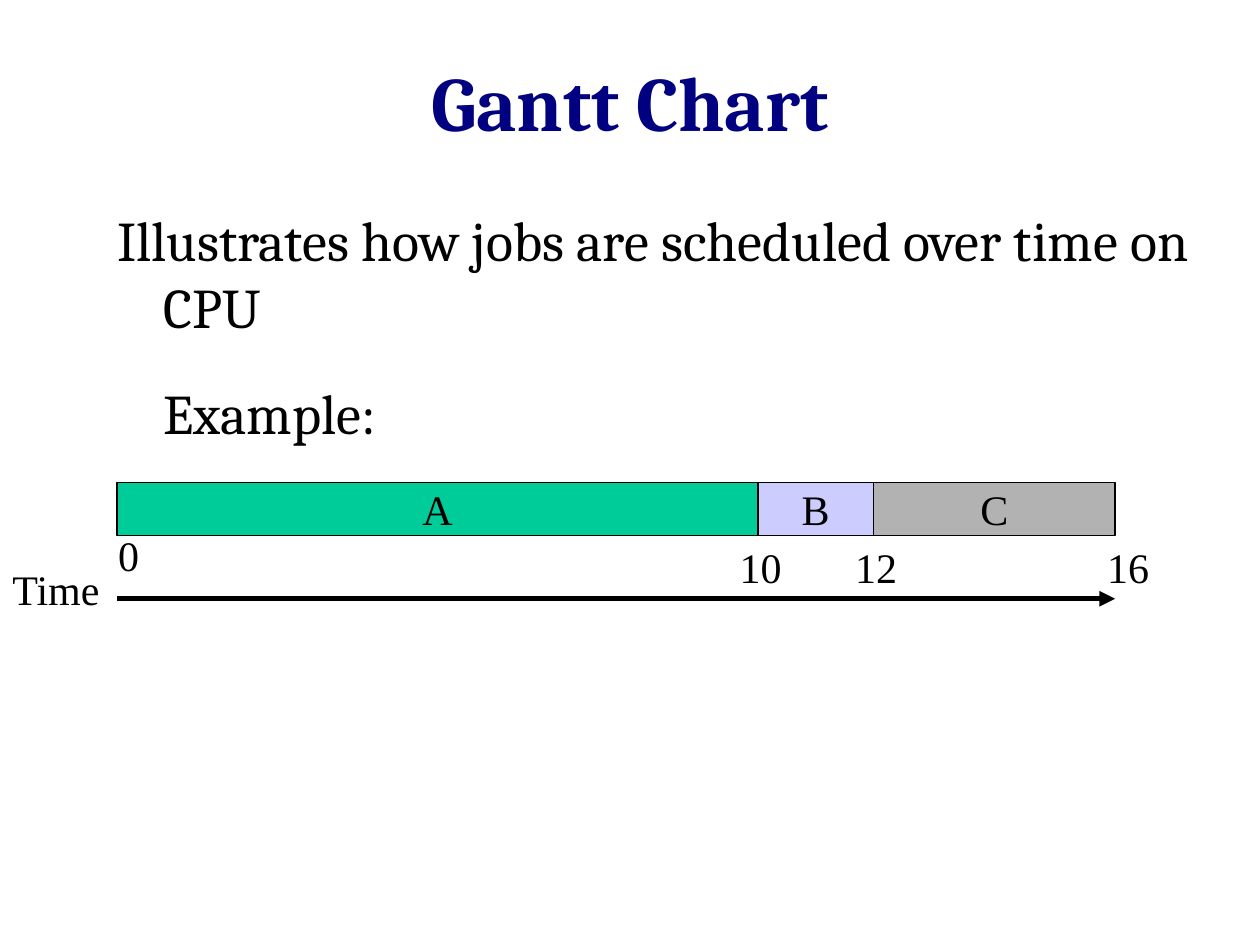
"""Build a slide with a Gantt chart of three jobs on a CPU."""
from lxml import etree
from pptx import Presentation
from pptx.dml.color import RGBColor
from pptx.enum.shapes import MSO_CONNECTOR, MSO_SHAPE
from pptx.enum.text import MSO_ANCHOR, MSO_AUTO_SIZE, PP_ALIGN
from pptx.oxml.ns import qn
from pptx.util import Cm, Pt

RECTANGLE = MSO_SHAPE.RECTANGLE
STRAIGHT = MSO_CONNECTOR.STRAIGHT
MIDDLE = MSO_ANCHOR.MIDDLE
FIT_SHAPE = MSO_AUTO_SIZE.SHAPE_TO_FIT_TEXT
LEFT = PP_ALIGN.LEFT
CENTER = PP_ALIGN.CENTER
HEADING_FONT = "Cambria"
LABEL_FONT = "Times New Roman"
BLACK = "000000"


def color(hex_string):
    return RGBColor.from_string(hex_string)


def write(shape, text, font_name, size, hex_string=BLACK, alignment=LEFT, bold=False):
    shape.text_frame.text = text
    for paragraph in shape.text_frame.paragraphs:
        paragraph.alignment = alignment
        for run in paragraph.runs:
            run.font.name = font_name
            run.font.size = Pt(size)
            run.font.bold = bold
            run.font.color.rgb = color(hex_string)


presentation = Presentation()
presentation.slide_width = Cm(25.4)
presentation.slide_height = Cm(19.05)
slide = presentation.slides.add_slide(presentation.slide_layouts[6])

title = slide.shapes.add_textbox(Cm(0), Cm(0.03), Cm(25.4), Cm(3.99))
title.text_frame.word_wrap = True
title.text_frame.vertical_anchor = MIDDLE
write(title, "Gantt Chart", HEADING_FONT, 44, "000080", CENTER, True)

body = slide.shapes.add_textbox(Cm(2.1), Cm(4.01), Cm(22.86), Cm(11.84))
body.text_frame.word_wrap = True
write(body, "Illustrates how jobs are scheduled over time on CPU\nExample:", HEADING_FONT, 32)
for paragraph, indent in zip(body.text_frame.paragraphs, (-0.94, 0)):
    properties = paragraph._p.get_or_add_pPr()
    properties.set("marL", str(Cm(0.95)))
    properties.set("indent", str(Cm(indent)))
body.text_frame.paragraphs[1].space_before = Pt(22)

chart = slide.shapes.add_group_shape()
bar_top, bar_height = 9.73, 1.07
edges = [2.36, 15.28, 17.61, 22.48]
jobs = [("A", "00CC99"), ("B", "CCCCFF"), ("C", "B2B2B2")]
for (job, fill), start, end in zip(jobs, edges, edges[1:]):
    bar = chart.shapes.add_shape(
        RECTANGLE, Cm(start), Cm(bar_top), Cm(end - start), Cm(bar_height))
    bar.shadow.inherit = False
    bar.fill.solid()
    bar.fill.fore_color.rgb = color(fill)
    bar.line.color.rgb = color(BLACK)
    bar.line.width = Pt(0.75)
    bar.text_frame.word_wrap = False
    bar.text_frame.vertical_anchor = MIDDLE
    write(bar, job, LABEL_FONT, 24, alignment=CENTER)

axis = chart.shapes.add_connector(STRAIGHT, Cm(edges[0]), Cm(12.07), Cm(edges[-1]), Cm(12.07))
axis.line.color.rgb = color(BLACK)
axis.line.width = Pt(3)
etree.SubElement(axis.line._get_or_add_ln(), qn("a:tailEnd"), type="triangle")
etree.SubElement(axis._element.spPr, qn("a:effectLst"))

labels = [
    ("Time", 0, 11.23, 2.26),
    ("10", 14.66, 10.8, 1.35),
    ("12", 16.99, 10.8, 1.35),
    ("16", 22.07, 10.8, 1.35),
    ("0", 2.13, 10.54, 0.91),
]
for text, left, top, width in labels:
    label = chart.shapes.add_textbox(Cm(left), Cm(top), Cm(width), Cm(1.27))
    label.text_frame.word_wrap = False
    label.text_frame.auto_size = FIT_SHAPE
    write(label, text, LABEL_FONT, 24)

presentation.save("out.pptx")
